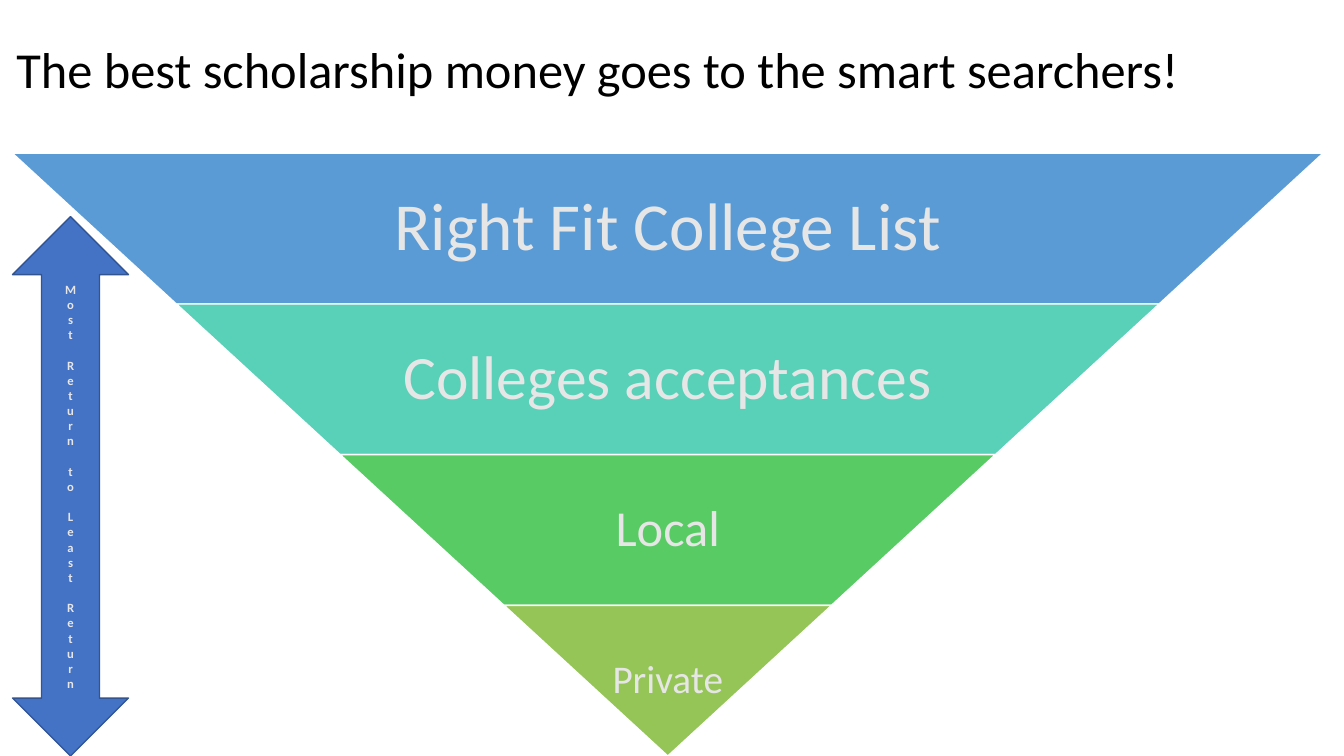
"""Build the scholarship funnel slide."""
from pptx import Presentation, util as u
from pptx.dml.color import RGBColor
from pptx.enum import shapes, text

COLUMNS, ROWS = 320, 180


def color(value):
    """Turn a hex string into a colour."""
    return RGBColor.from_string(value)


class FunnelSlide:
    """Hold the style, the grid and the current slide."""

    font_name = "Calibri"
    title_color = "000000"
    label_color = "E7E6E6"

    def __init__(self, presentation):
        """Add a title-only slide and measure its grid."""
        self.column = presentation.slide_width / COLUMNS
        self.row = presentation.slide_height / ROWS
        self.slide = presentation.slides.add_slide(presentation.slide_layouts[5])

    def x(self, columns):
        """Convert columns to a length."""
        return u.Emu(round(columns * self.column))

    def y(self, rows):
        """Convert rows to a length."""
        return u.Emu(round(rows * self.row))

    def paint(self, shape, fill, line):
        """Give a shape a flat fill and a thin outline."""
        shape.shadow.inherit = False
        shape.fill.solid()
        shape.fill.fore_color.rgb = color(fill)
        shape.line.color.rgb = color(line)
        shape.line.width = u.Pt(1)

    def label(self, shape, words, size, ink, align=text.PP_ALIGN.CENTER, bold=False):
        """Set one run in the middle of a shape's height."""
        frame = shape.text_frame
        frame.word_wrap = True
        frame.auto_size = text.MSO_AUTO_SIZE.NONE
        frame.vertical_anchor = text.MSO_ANCHOR.MIDDLE
        paragraph = frame.paragraphs[0]
        paragraph.alignment = align
        run = paragraph.add_run()
        run.text = words
        run.font.name = self.font_name
        run.font.size = u.Pt(size)
        run.font.bold = bold
        run.font.color.rgb = color(ink)
        return paragraph

    def title(self, words, left, top, width, height):
        """Place and fill the title placeholder."""
        shape = self.slide.shapes.title
        shape.left, shape.top = self.x(left), self.y(top)
        shape.width, shape.height = self.x(width), self.y(height)
        self.label(shape, words, 36, self.title_color, text.PP_ALIGN.LEFT)

    def funnel(self, bands, left, top, width, height):
        """Stack equal-height bands that narrow to a point."""
        step = width / 2 / len(bands)
        depth = height / len(bands)
        for index, (words, size, fill) in enumerate(bands):
            inset, upper = index * step, top + index * depth
            self.band(words, size, fill, left + inset, upper,
                      width - 2 * inset, depth, step)

    def band(self, words, size, fill, left, top, width, height, step):
        """Draw one trapezoid that narrows by a step on each side."""
        right, bottom = left + width, top + height
        corners = [(right, top), (right - step, bottom),
                   (left + step, bottom), (left, top)]
        points = [(self.x(column), self.y(row)) for column, row in corners]
        builder = self.slide.shapes.build_freeform(*points[0])
        builder.add_line_segments(points[1:], close=True)
        shape = builder.convert_to_shape()
        self.paint(shape, fill, "FFFFFF")
        frame = shape.text_frame
        frame.margin_left = frame.margin_right = self.x(1)
        frame.margin_top = frame.margin_bottom = self.y(1)
        self.label(shape, words, size, self.label_color).line_spacing = 0.9

    def arrow(self, words, left, top, width, height):
        """Draw a double arrow with stacked letters."""
        shape = self.slide.shapes.add_shape(
            shapes.MSO_SHAPE.UP_DOWN_ARROW,
            self.x(left), self.y(top), self.x(width), self.y(height))
        self.paint(shape, "4472C4", "325491")
        self.label(shape, words, 9, self.label_color, bold=True)
        shape.element.txBody.bodyPr.set("vert", "wordArtVert")


def main():
    """Build and save the presentation."""
    presentation = Presentation()
    presentation.slide_width = u.Inches(13.33)
    presentation.slide_height = u.Inches(7.5)
    slide = FunnelSlide(presentation)
    slide.title("The best scholarship money goes to the smart searchers!",
                1.5, 7.7, 313, 17)
    slide.funnel([("Right Fit College List", 48, "5B9BD5"),
                  ("Colleges acceptances", 44, "59D0B8"),
                  ("Local", 36, "58CB65"),
                  ("Private", 28, "95C557")],
                 3, 36.5, 312, ROWS - 36.5)
    slide.arrow("Most Return to Least Return", 3, 51.6, 27.6, ROWS - 51.6)
    presentation.save("out.pptx")


if __name__ == "__main__":
    main()
